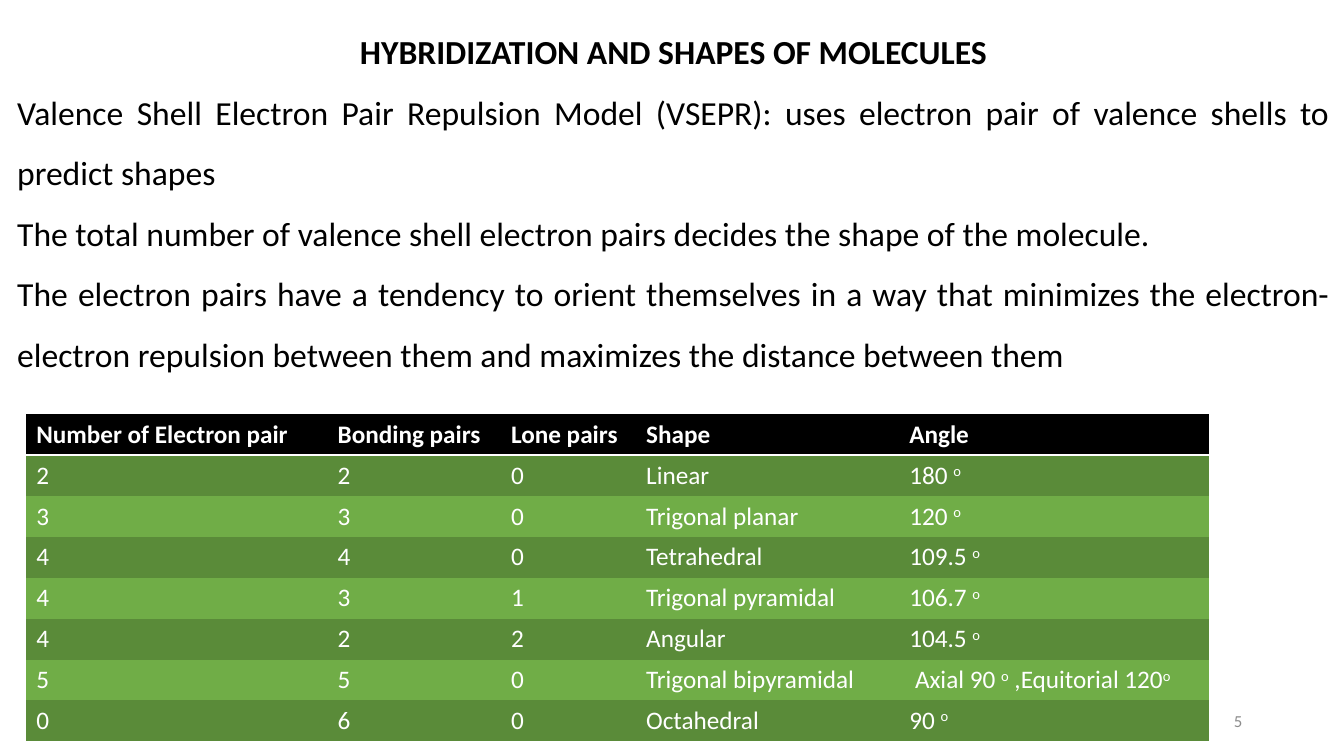
from dataclasses import dataclass

import pptx
import pptx.dml.color
import pptx.enum.text
import pptx.oxml
import pptx.oxml.ns
import pptx.util
from pptx.util import Inches

ALIGN = pptx.enum.text.PP_ALIGN
ANCHOR = pptx.enum.text.MSO_ANCHOR


@dataclass(frozen=True)
class Theme:
    font: str = "Calibri"
    ink: str = "000000"
    light: str = "FFFFFF"
    muted: str = "8C8C8C"
    bands: tuple = ("5A8B39", "70AD47")
    text_size: int = 24
    table_size: int = 18
    number_size: int = 12
    rule_width: int = 2


THEME = Theme()
PLAIN_TABLE_STYLE = "{2D5ABB26-0587-4C30-8999-92F81FD0307C}"

TITLE = "HYBRIDIZATION AND SHAPES OF MOLECULES"
STATEMENTS = [
    "Valence Shell Electron Pair Repulsion Model (VSEPR): uses electron pair "
    "of valence shells to predict shapes",
    "The total number of valence shell electron pairs decides the shape of the molecule.",
    "The electron pairs have a tendency to orient themselves in a way that minimizes "
    "the electron-electron repulsion between them and maximizes the distance between them",
]
# Text between carets is superscript.
GEOMETRIES = [
    ("Number of Electron pair", "Bonding pairs", "Lone pairs", "Shape", "Angle"),
    ("2", "2", "0", "Linear", "180 ^o^"),
    ("3", "3", "0", "Trigonal planar", "120 ^o^"),
    ("4", "4", "0", "Tetrahedral", "109.5 ^o^"),
    ("4", "3", "1", "Trigonal pyramidal", "106.7 ^o^"),
    ("4", "2", "2", "Angular", "104.5 ^o^"),
    ("5", "5", "0", "Trigonal bipyramidal", " Axial 90 ^o^ ,Equitorial 120^o^"),
    ("0", "6", "0", "Octahedral", "90 ^o^"),
]
COLUMN_WIDTHS = (2.99, 1.72, 1.34, 2.61, 3.07)
ROW_HEIGHT = 0.405


def rgb(value):
    return pptx.dml.color.RGBColor.from_string(value)


def add_run(paragraph, text, size, color, bold=False, raised=False):
    run = paragraph.add_run()
    run.text = text
    run.font.name = THEME.font
    run.font.size = pptx.util.Pt(size)
    run.font.bold = bold
    run.font.color.rgb = rgb(color)
    if raised:
        run.font._element.set("baseline", "30000")


def place(shape, left, top, width, height, anchor=ANCHOR.TOP):
    """Position a text shape and fix how its text sits inside."""
    shape.left, shape.top = Inches(left), Inches(top)
    shape.width, shape.height = Inches(width), Inches(height)
    frame = shape.text_frame
    frame.word_wrap = True
    frame.auto_size = pptx.enum.text.MSO_AUTO_SIZE.NONE
    frame.vertical_anchor = anchor
    return frame


def fill_paragraphs(frame, texts, alignment, bold=False):
    """Write unbulleted paragraphs at one and a half line spacing."""
    for index, text in enumerate(texts):
        paragraph = frame.add_paragraph() if index else frame.paragraphs[0]
        paragraph.alignment = alignment
        paragraph.line_spacing = 1.5
        paragraph.space_before = paragraph.space_after = pptx.util.Pt(0)
        properties = paragraph._p.get_or_add_pPr()
        properties.set("marL", "0")
        properties.set("indent", "0")
        properties.append(pptx.oxml.parse_xml(
            f'<a:buNone {pptx.oxml.ns.nsdecls("a")}/>'))
        add_run(paragraph, text, THEME.text_size, THEME.ink, bold)


def underline_cell(cell):
    width = pptx.util.Pt(THEME.rule_width)
    border = pptx.oxml.parse_xml(
        f'<a:lnB {pptx.oxml.ns.nsdecls("a")} w="{width}"><a:solidFill>'
        f'<a:srgbClr val="{THEME.light}"/></a:solidFill></a:lnB>')
    cell._tc.get_or_add_tcPr().insert(0, border)


def fill_cell(cell, text, background, header):
    cell.fill.solid()
    cell.fill.fore_color.rgb = rgb(background)
    if header:
        underline_cell(cell)
    for index, part in enumerate(text.split("^")):
        if part:
            add_run(cell.text_frame.paragraphs[0], part, THEME.table_size,
                    THEME.light, bold=header, raised=index % 2 == 1)


def add_geometry_table(slide, left, top):
    table = slide.shapes.add_table(
        len(GEOMETRIES), len(COLUMN_WIDTHS), Inches(left), Inches(top),
        Inches(sum(COLUMN_WIDTHS)), Inches(ROW_HEIGHT * len(GEOMETRIES))).table
    style = table._tbl.tblPr.find(pptx.oxml.ns.qn("a:tableStyleId"))
    style.text = PLAIN_TABLE_STYLE
    for column, width in zip(table.columns, COLUMN_WIDTHS):
        column.width = Inches(width)
    for row_index, geometry in enumerate(GEOMETRIES):
        table.rows[row_index].height = Inches(ROW_HEIGHT)
        header = row_index == 0
        background = THEME.ink if header else THEME.bands[(row_index - 1) % 2]
        for column_index, text in enumerate(geometry):
            fill_cell(table.cell(row_index, column_index), text, background, header)


def add_slide_number(slide, number):
    box = slide.shapes.add_textbox(0, 0, 0, 0)
    frame = place(box, 9.42, 6.95, 3, 0.4, ANCHOR.MIDDLE)
    paragraph = frame.paragraphs[0]
    paragraph.alignment = ALIGN.RIGHT
    add_run(paragraph, number, THEME.number_size, THEME.muted)


def main():
    deck = pptx.Presentation()
    deck.slide_width, deck.slide_height = Inches(13.33), Inches(7.5)
    slide = deck.slides.add_slide(deck.slide_layouts[1])
    add_slide_number(slide, "5")
    heading = place(slide.shapes.title, 0.07, 0.06, 13.22, 0.7)
    fill_paragraphs(heading, [TITLE], ALIGN.CENTER, bold=True)
    explanation = place(slide.placeholders[1], 0.07, 0.66, 13.22, 3.4)
    fill_paragraphs(explanation, STATEMENTS, ALIGN.JUSTIFY)
    add_geometry_table(slide, 0.26, 4.11)
    deck.save("out.pptx")


if __name__ == "__main__":
    main()
